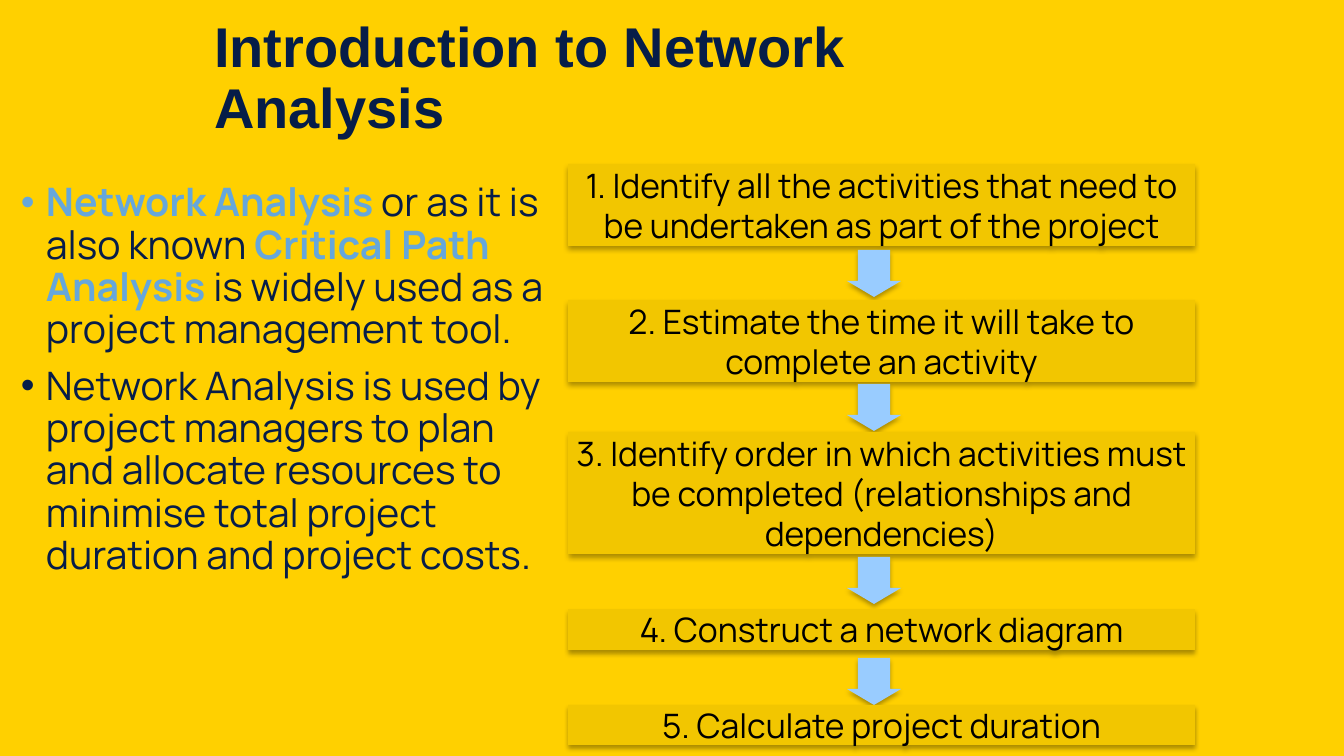
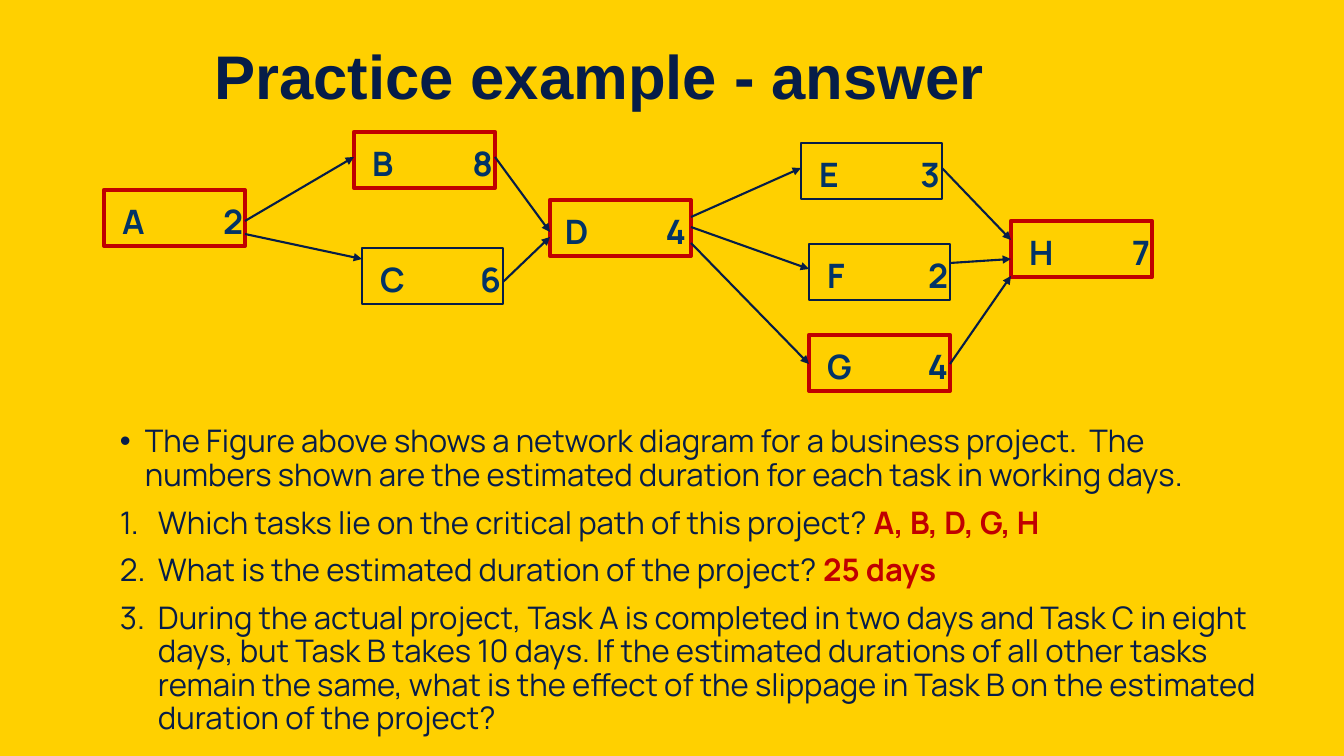
from lxml.etree import SubElement
from pptx import Presentation
from pptx.dml.color import RGBColor
from pptx.enum.shapes import MSO_CONNECTOR, MSO_SHAPE
from pptx.enum.text import MSO_ANCHOR, MSO_AUTO_SIZE, PP_ALIGN
from pptx.oxml.ns import qn
from pptx.util import Emu, Pt

EMU_PER_PX = 914400 / 100.8
TITLE_ONLY = 5

YELLOW = "FFD000"
GOLD = "F2C600"
NAVY = "061D48"
BODY_NAVY = "071D49"
NODE_NAVY = "023366"
SKY = "66A7DB"
PALE_BLUE = "99CCFF"
RED = "C00000"
BLACK = "000000"


def px(length):
    return Emu(round(length * EMU_PER_PX))


def color(hex_string):
    return RGBColor.from_string(hex_string)


def add_xml(parent, tag, **attributes):
    return SubElement(parent, qn(tag), {name: str(value) for name, value in attributes.items()})


def write(paragraph, text, size=24, font="Manrope", ink=BODY_NAVY, bold=False,
          align=PP_ALIGN.LEFT, line_spacing=None, space_before=0):
    """Append one run and set the format of its paragraph."""
    paragraph.alignment = align
    paragraph.space_before = Pt(space_before)
    if line_spacing:
        paragraph.line_spacing = line_spacing
    run = paragraph.add_run()
    run.text = text
    run.font.size = Pt(size)
    run.font.name = font
    run.font.bold = bold
    run.font.color.rgb = color(ink)


def add_bullet(paragraph, indent, numbered):
    properties = paragraph._p.get_or_add_pPr()
    properties.set("marL", str(px(indent)))
    properties.set("indent", str(-px(indent)))
    if numbered:
        add_xml(properties, "a:buFont", typeface="+mj-lt")
        add_xml(properties, "a:buAutoNum", type="arabicPeriod")
    else:
        add_xml(properties, "a:buFont", typeface="Arial")
        add_xml(properties, "a:buChar", char="•")


class Deck:
    """The shared style and the slide being drawn."""

    def __init__(self):
        self.presentation = Presentation()
        self.presentation.slide_width = px(1344)
        self.presentation.slide_height = px(756)
        background = self.presentation.slide_master.background.fill
        background.solid()
        background.fore_color.rgb = color(YELLOW)
        self.slide = None

    def add_slide(self, title, width, size):
        layout = self.presentation.slide_layouts[TITLE_ONLY]
        self.slide = self.presentation.slides.add_slide(layout)
        shape = self.slide.shapes.title
        shape.left, shape.top, shape.width, shape.height = map(px, (204, 7, width, 146))
        frame = shape.text_frame
        frame.word_wrap = True
        frame.auto_size = MSO_AUTO_SIZE.NONE
        frame.vertical_anchor = MSO_ANCHOR.MIDDLE
        write(frame.paragraphs[0], title, size=size, font="Arial", ink=NAVY, bold=True,
              line_spacing=0.9)

    def body(self, left, top, width, height, items, size):
        """Add a list; each item is (numbered, indent, runs), a run is (text, format)."""
        frame = self.slide.shapes.add_textbox(*map(px, (left, top, width, height))).text_frame
        frame.word_wrap = True
        for index, (numbered, indent, runs) in enumerate(items):
            paragraph = frame.add_paragraph() if index else frame.paragraphs[0]
            add_bullet(paragraph, indent, numbered)
            for text, run_format in runs:
                write(paragraph, text, size=size, line_spacing=0.9,
                      space_before=10 if index else 0, **run_format)

    def shape(self, kind, left, top, width, height, fill=None, line=None, line_width=1):
        shape = self.slide.shapes.add_shape(kind, *map(px, (left, top, width, height)))
        shape.shadow.inherit = False
        if fill:
            shape.fill.solid()
            shape.fill.fore_color.rgb = color(fill)
        else:
            shape.fill.background()
        if line:
            shape.line.color.rgb = color(line)
            shape.line.width = Pt(line_width)
        else:
            shape.line.fill.background()
        return shape

    def raised_shape(self, kind, left, top, width, height, fill):
        """Add a filled shape with a soft shadow below it."""
        shape = self.shape(kind, left, top, width, height, fill=fill)
        effects = shape._element.spPr.find(qn("a:effectLst"))
        shadow = add_xml(effects, "a:outerShdw", blurRad=Pt(3.5), dist=Pt(2.2),
                         dir=5400000, algn="ctr", rotWithShape=0)
        add_xml(add_xml(shadow, "a:srgbClr", val=BLACK), "a:alpha", val=32000)
        return shape

    def step(self, text, top, height):
        shape = self.raised_shape(MSO_SHAPE.RECTANGLE, 568, top, 627, height, GOLD)
        frame = shape.text_frame
        frame.word_wrap = True
        frame.vertical_anchor = MSO_ANCHOR.MIDDLE
        frame.margin_left = frame.margin_right = frame.margin_top = frame.margin_bottom = 0
        write(frame.paragraphs[0], text, ink=BLACK, align=PP_ALIGN.CENTER)

    def down_arrow(self, top):
        arrow = self.raised_shape(MSO_SHAPE.DOWN_ARROW, 847, top, 54, 47, PALE_BLUE)
        arrow.adjustments[0] = 0.6
        arrow.adjustments[1] = 0.34

    def node(self, name, days, left, top, critical, inset=18):
        """Add a task box with its name on the left and its duration on the right."""
        line, line_width = (RED, 3) if critical else (NAVY, 1)
        shape = self.shape(MSO_SHAPE.RECTANGLE, left, top, NODE_WIDTH, NODE_HEIGHT,
                           line=line, line_width=line_width)
        frame = shape.text_frame
        frame.word_wrap = True
        frame.vertical_anchor = MSO_ANCHOR.TOP
        frame.margin_left, frame.margin_top = px(inset), px(11)
        frame.margin_right = frame.margin_bottom = 0
        paragraph = frame.paragraphs[0]
        tabs = add_xml(paragraph._p.get_or_add_pPr(), "a:tabLst")
        add_xml(tabs, "a:tab", pos=px(121), algn="r")
        write(paragraph, f"{name}\t{days}", ink=NODE_NAVY, bold=True)

    def arrow(self, start, end):
        connector = self.slide.shapes.add_connector(MSO_CONNECTOR.STRAIGHT,
                                                    *map(px, (*start, *end)))
        connector.line.color.rgb = color(NAVY)
        connector.line.width = Pt(1.5)
        add_xml(connector.line._get_or_add_ln(), "a:tailEnd", type="triangle")
        add_xml(connector._element.spPr, "a:effectLst")


NODE_WIDTH, NODE_HEIGHT = 141, 56

# Text, top, height and the top of the arrow that follows
STEPS = [
    ("1. Identify all the activities that need to be undertaken as part of the project",
     164, 82, 250),
    ("2. Estimate the time it will take to complete an activity", 300, 82, 384),
    ("3. Identify order in which activities must be completed (relationships and dependencies)",
     432, 122, 557),
    ("4. Construct a network diagram", 609, 41, 658),
    ("5. Calculate project duration", 705, 40, None),
]

# Days, left, top, on the critical path
TASKS = {
    "A": (2, 104, 190, True),
    "B": (8, 354, 132, True),
    "C": (6, 362, 248, False),
    "D": (4, 550, 200, True),
    "E": (3, 801, 143, False),
    "F": (2, 809, 244, False),
    "G": (4, 809, 335, True),
    "H": (7, 1011, 221, True),
}

# Tasks, and how far below the top of each box the arrow leaves and arrives
LINKS = [
    ("A", "B", 31, 25), ("A", "C", 44, 11),
    ("B", "D", 25, 32), ("C", "D", 34, 37),
    ("D", "E", 17, 25), ("D", "F", 27, 25), ("D", "G", 43, 29),
    ("E", "H", 25, 19), ("F", "H", 19, 38), ("G", "H", 29, 55),
]


def build_introduction(deck):
    deck.add_slide("Introduction to Network Analysis", width=801, size=40)
    term = {"ink": SKY, "bold": True}
    deck.body(11, 178, 545, 528, [
        (False, 25, [("Network Analysis ", term),
                     ("or as it is also known ", {}),
                     ("Critical Path Analysis", term),
                     (" is widely used as a project management tool.", {})]),
        (False, 25, [("Network Analysis is used by project managers to plan and allocate "
                      "resources to minimise total project duration and project costs.", {})]),
    ], size=28)
    for text, top, height, arrow_top in STEPS:
        deck.step(text, top, height)
        if arrow_top:
            deck.down_arrow(arrow_top)


def build_answer(deck):
    deck.add_slide("Practice example - answer", width=990, size=44)
    answer = {"ink": RED, "bold": True}
    deck.body(110, 421, 1159, 331, [
        (False, 25, [("The Figure above shows a network diagram for a business project.  The "
                      "numbers shown are the estimated duration for each task in working days.",
                      {})]),
        (True, 38, [("Which tasks lie on the critical path of this project? ", {}),
                    ("A, B, D, G, H", answer)]),
        (True, 38, [("What is the estimated duration of the project? ", {}),
                    ("25 days", answer)]),
        (True, 38, [("During the actual project, Task A is completed in two days and Task C in "
                     "eight days, but Task B takes 10 days. If the estimated durations of all "
                     "other tasks remain the same, what is the effect of the slippage in Task B "
                     "on the estimated duration of the project?", {})]),
    ], size=22.2)
    for name, (days, left, top, critical) in TASKS.items():
        deck.node(name, days, left, top, critical, inset=15 if name == "D" else 18)
    for source, target, leave, arrive in LINKS:
        _, source_left, source_top, _ = TASKS[source]
        _, target_left, target_top, _ = TASKS[target]
        deck.arrow((source_left + NODE_WIDTH, source_top + leave),
                   (target_left, target_top + arrive))


def main():
    deck = Deck()
    build_introduction(deck)
    build_answer(deck)
    deck.presentation.save("out.pptx")


if __name__ == "__main__":
    main()
